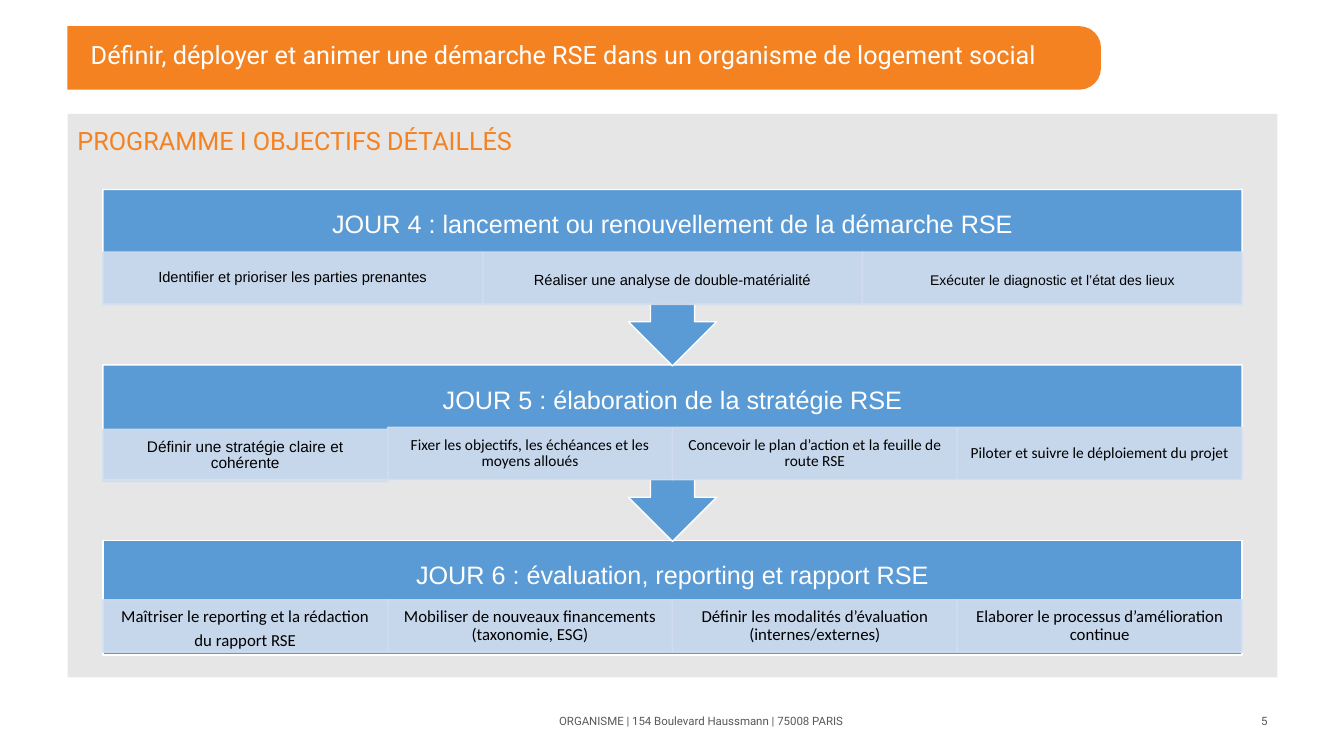
"""Build the slide on days 4 to 6 of the RSE training programme."""
from dataclasses import dataclass

import lxml.etree
import pptx
import pptx.dml.color
import pptx.enum.shapes
import pptx.enum.text
import pptx.oxml.ns
import pptx.util

Inches = pptx.util.Inches
Pt = pptx.util.Pt
Kind = pptx.enum.shapes.MSO_SHAPE
Align = pptx.enum.text.PP_ALIGN
Anchor = pptx.enum.text.MSO_ANCHOR

ORANGE, BLUE, PALE = "F58221", "5B9BD5", "D2DEEF"
WHITE, BLACK, PANEL, GREY = "FFFFFF", "000000", "E7E6E6", "58595B"
LEFT, WIDTH = 1.02, 11.3
HEAD, TILE = 0.62, 0.52


@dataclass
class Style:
    """Describe how a text looks."""
    size: float
    font: str
    color: str = BLACK
    align: Align = Align.CENTER
    lead: float = 0.9
    anchor: Anchor = Anchor.MIDDLE
    inset: tuple = (0.1, 0.05)


@dataclass
class Step:
    """Describe one tile of a day."""
    text: str
    size: float
    font: str
    lead: float = 0.9
    drop: float = HEAD


@dataclass
class Day:
    """Describe one day and its tiles."""
    top: float
    high: float
    kind: Kind
    turn: int
    title: str
    steps: list


DAYS = [
    Day(1.88, 1.75, Kind.UP_ARROW_CALLOUT, 180,
        "JOUR 4 : lancement ou renouvellement de la démarche RSE", [
            Step("Identifier et prioriser les parties prenantes", 10.5, "Arial"),
            Step("Réaliser une analyse de double-matérialité", 10.5, "Arial", 1.2),
            Step("Exécuter le diagnostic et l’état des lieux", 10, "Arial", 1.2)]),
    Day(3.62, 1.75, Kind.UP_ARROW_CALLOUT, 180,
        "JOUR 5 : élaboration de la stratégie RSE", [
            Step("Définir une stratégie claire et cohérente", 11, "Arial", drop=0.64),
            Step("Fixer les objectifs, les échéances et les moyens alloués", 11, "Calibri"),
            Step("Concevoir le plan d’action et la feuille de route RSE", 11, "Calibri"),
            Step("Piloter et suivre le déploiement du projet", 11, "Calibri")]),
    Day(5.36, 1.14, Kind.RECTANGLE, 0,
        "JOUR 6 : évaluation, reporting et rapport RSE", [
            Step("Maîtriser le reporting et la rédaction du rapport RSE", 12, "Calibri", 1.2, 0.59),
            Step("Mobiliser de nouveaux financements (taxonomie, ESG)", 12, "Calibri", drop=0.59),
            Step("Définir les modalités d’évaluation (internes/externes)", 12, "Calibri", drop=0.59),
            Step("Elaborer le processus d’amélioration continue", 12, "Calibri", drop=0.59)]),
]


def tint(code: str) -> pptx.dml.color.RGBColor:
    """Turn a hex string into a colour."""
    return pptx.dml.color.RGBColor.from_string(code)


def write(shape, text: str, style: Style) -> None:
    """Put one styled paragraph in a shape."""
    frame = shape.text_frame
    frame.word_wrap = True
    frame.auto_size = pptx.enum.text.MSO_AUTO_SIZE.NONE
    frame.vertical_anchor = style.anchor
    side, edge = (Inches(gap) for gap in style.inset)
    frame.margin_left = frame.margin_right = side
    frame.margin_top = frame.margin_bottom = edge
    para = frame.paragraphs[0]
    para.alignment = style.align
    para.line_spacing = style.lead
    run = para.add_run()
    run.text = text
    run.font.size = Pt(style.size)
    run.font.name = style.font
    run.font.color.rgb = tint(style.color)


def fade(color) -> None:
    """Make a solid colour 90 % opaque."""
    node = color.find(".//" + pptx.oxml.ns.qn("a:srgbClr"))
    lxml.etree.SubElement(node, pptx.oxml.ns.qn("a:alpha"), val="90000")


def block(slide, kind: Kind, area: tuple, fill: str, line: str = ""):
    """Draw a filled shape, with a border if a line colour is given."""
    shape = slide.shapes.add_shape(kind, *map(Inches, area))
    shape.shadow.inherit = False
    shape.fill.solid()
    shape.fill.fore_color.rgb = tint(fill)
    if line:
        shape.line.color.rgb = tint(line)
        shape.line.width = Pt(1)
    else:
        shape.line.fill.background()
    return shape


def label(slide, area: tuple, text: str, style: Style) -> None:
    """Add a text box."""
    write(slide.shapes.add_textbox(*map(Inches, area)), text, style)


def draw(slide, day: Day) -> None:
    """Draw a day with its heading and its row of tiles."""
    body = block(slide, day.kind, (LEFT, day.top, WIDTH, day.high), BLUE, WHITE)
    body.rotation = day.turn
    label(slide, (LEFT, day.top, WIDTH, HEAD), day.title,
          Style(18, "Arial", WHITE, lead=1.2, inset=(0.14, 0.14)))
    wide = WIDTH / len(day.steps)
    for spot, step in enumerate(day.steps):
        area = (LEFT + spot * wide, day.top + step.drop, wide, TILE)
        tile = block(slide, Kind.RECTANGLE, area, PALE, PALE)
        for part in (pptx.oxml.ns.qn("a:solidFill"), pptx.oxml.ns.qn("a:ln")):
            fade(tile._element.spPr.find(part))
        write(tile, step.text,
              Style(step.size, step.font, lead=step.lead, inset=(0.09, 0.02)))


def main() -> None:
    """Build and save the slide."""
    deck = pptx.Presentation()
    deck.slide_width, deck.slide_height = Inches(13.33), Inches(7.5)
    slide = deck.slides.add_slide(deck.slide_layouts[5])

    banner = block(slide, Kind.ROUNDED_RECTANGLE, (0.09, 0.26, 10.83, 0.63), ORANGE)
    banner.adjustments[0] = 0.34
    block(slide, Kind.RECTANGLE, (0, 0.15, 0.67, 0.88), WHITE)
    title = slide.shapes.title
    title.left, title.top, title.width, title.height = map(Inches, (0.8, 0.26, 9.9, 0.6))
    write(title, "Définir, déployer et animer une démarche RSE dans un organisme de logement social",
          Style(18, "Roboto", WHITE, Align.LEFT))
    slide.shapes._spTree.append(title._element)

    panel = block(slide, Kind.RECTANGLE, (0.67, 1.13, 12, 5.59), PANEL)
    write(panel, "PROGRAMME I OBJECTIFS DÉTAILLÉS",
          Style(18, "Roboto", ORANGE, Align.LEFT, 1.2, Anchor.TOP))
    for day in reversed(DAYS):
        draw(slide, day)

    label(slide, (4.42, 6.95, 5.07, 0.4), "ORGANISME | 154 Boulevard Haussmann | 75008 PARIS",
          Style(8.2, "Roboto", GREY, lead=1.0))
    label(slide, (9.67, 6.95, 3, 0.4), "5",
          Style(8.2, "Roboto", GREY, Align.RIGHT, 1.0))
    deck.save("out.pptx")


if __name__ == "__main__":
    main()
